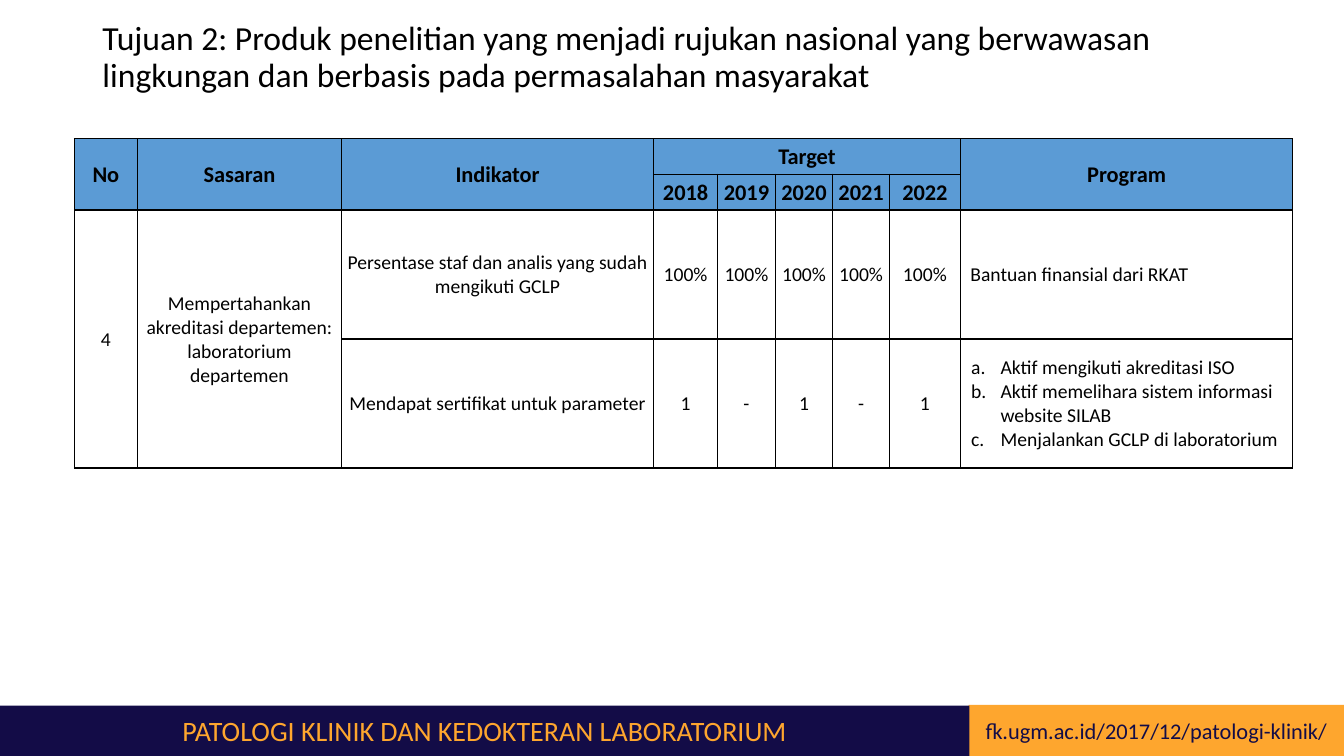
import pptx
import pptx.dml.color
import pptx.enum.shapes
import pptx.enum.text
import pptx.oxml
import pptx.oxml.ns
import pptx.util

Pt = pptx.util.Pt
ALIGN = pptx.enum.text.PP_ALIGN
MIDDLE = pptx.enum.text.MSO_ANCHOR.MIDDLE
COLORS = {
    "black": "000000",
    "white": "FFFFFF",
    "header": "5B9BD5",
    "navy": "130C47",
    "orange": "FEA62E",
}
COLUMN_WIDTHS = [44.9, 146, 222.8, 45.8, 41.2, 41, 40.6, 50.6, 237.5]
ROW_HEIGHTS = [25.5, 25.5, 92.2, 92.2]
YEARS = ["2018", "2019", "2020", "2021", "2022"]
PROGRAMS = [
    "Aktif mengikuti akreditasi ISO",
    "Aktif memelihara sistem informasi website SILAB",
    "Menjalankan GCLP di laboratorium",
]
# Each entry: text at the top left cell of its span
ROWS = [
    ["No", "Sasaran", "Indikator", "Target", "", "", "", "", "Program"],
    ["", "", "", *YEARS, ""],
    ["4", "Mempertahankan akreditasi departemen: laboratorium departemen",
     "Persentase staf dan analis yang sudah mengikuti GCLP",
     *["100%"] * 5, "Bantuan finansial dari RKAT"],
    ["", "", "Mendapat sertifikat untuk parameter",
     "1", "-", "1", "-", "1", "\n".join(PROGRAMS)],
]
# First row, first column, last row, last column
SPANS = [(0, 0, 1, 0), (0, 1, 1, 1), (0, 2, 1, 2), (0, 3, 0, 7),
         (0, 8, 1, 8), (2, 0, 3, 0), (2, 1, 3, 1)]


class SlideBuilder:
    """Holds the shared style and the current slide."""

    font_name = "Calibri"

    def __init__(self, presentation):
        self.slide = presentation.slides.add_slide(presentation.slide_layouts[5])

    def color(self, name):
        return pptx.dml.color.RGBColor.from_string(COLORS[name])

    def fill(self, target, name):
        target.fill.solid()
        target.fill.fore_color.rgb = self.color(name)

    def format(self, paragraph, size, color="black", bold=False, align=ALIGN.LEFT):
        paragraph.alignment = align
        font = paragraph.font
        font.name = self.font_name
        font.size = Pt(size)
        font.bold = bold
        font.color.rgb = self.color(color)

    def title(self, text, left, top, width, height):
        shape = self.slide.shapes.title
        shape.left, shape.top = Pt(left), Pt(top)
        shape.width, shape.height = Pt(width), Pt(height)
        frame = shape.text_frame
        frame.text = text
        frame.auto_size = pptx.enum.text.MSO_AUTO_SIZE.NONE
        frame.vertical_anchor = MIDDLE
        frame.paragraphs[0].line_spacing = 0.9
        self.format(frame.paragraphs[0], 24)

    def bar(self, text, left, top, width, height, fill, color, size):
        shape = self.slide.shapes.add_shape(
            pptx.enum.shapes.MSO_SHAPE.RECTANGLE,
            Pt(left), Pt(top), Pt(width), Pt(height))
        shape.shadow.inherit = False
        shape.line.fill.background()
        self.fill(shape, fill)
        frame = shape.text_frame
        frame.text = text
        frame.word_wrap = True
        frame.vertical_anchor = MIDDLE
        self.format(frame.paragraphs[0], size, color, align=ALIGN.CENTER)

    def indent(self, paragraph, margin, hanging=0):
        properties = paragraph._p.get_or_add_pPr()
        properties.set("marL", str(Pt(margin)))
        properties.set("indent", str(-Pt(hanging)))
        if hanging:
            properties.append(pptx.oxml.parse_xml(
                f'<a:buAutoNum {pptx.oxml.ns.nsdecls("a")} type="alphaLcPeriod"/>'))

    def borders(self, cell):
        properties = cell._tc.get_or_add_tcPr()
        for side in "LRTB":
            properties.append(pptx.oxml.parse_xml(
                f'<a:ln{side} {pptx.oxml.ns.nsdecls("a")} w="{Pt(1)}"><a:solidFill>'
                f'<a:srgbClr val="{COLORS["black"]}"/></a:solidFill></a:ln{side}>'))

    def cell(self, cell, text, header, program):
        self.borders(cell)
        self.fill(cell, "header" if header else "white")
        cell.margin_left = cell.margin_right = cell.margin_top = Pt(0.7)
        cell.margin_bottom = Pt(0)
        cell.vertical_anchor = MIDDLE
        cell.text = text
        paragraphs = cell.text_frame.paragraphs
        for paragraph in paragraphs:
            if program and len(paragraphs) > 1:
                self.indent(paragraph, 28, 21)
            elif program:
                self.indent(paragraph, 6.5)
            self.format(paragraph, 16 if header else 14, bold=header,
                        align=ALIGN.LEFT if program else ALIGN.CENTER)

    def table(self, left, top):
        table = self.slide.shapes.add_table(
            len(ROW_HEIGHTS), len(COLUMN_WIDTHS), Pt(left), Pt(top),
            Pt(sum(COLUMN_WIDTHS)), Pt(sum(ROW_HEIGHTS))).table
        table.first_row = table.horz_banding = False
        for column, width in zip(table.columns, COLUMN_WIDTHS):
            column.width = Pt(width)
        for row, height in zip(table.rows, ROW_HEIGHTS):
            row.height = Pt(height)
        for r, texts in enumerate(ROWS):
            for c, text in enumerate(texts):
                header = r < 2
                program = c == len(texts) - 1 and not header
                self.cell(table.cell(r, c), text, header, program)
        for top_row, first, bottom_row, last in SPANS:
            table.cell(top_row, first).merge(table.cell(bottom_row, last))


def main():
    presentation = pptx.Presentation()
    presentation.slide_width, presentation.slide_height = Pt(960), Pt(540)
    builder = SlideBuilder(presentation)

    # Heading
    builder.title("Tujuan 2: Produk penelitian yang menjadi rujukan nasional yang "
                  "berwawasan lingkungan dan berbasis pada permasalahan masyarakat",
                  66, 16, 828, 51)

    # Targets by year
    builder.table(53.2, 99)

    # Footer bars
    builder.bar("fk.ugm.ac.id/2017/12/patologi-klinik/",
                692, 503.5, 268, 36.5, "orange", "navy", 16)
    builder.bar("PATOLOGI KLINIK DAN KEDOKTERAN LABORATORIUM",
                0, 504, 692.5, 36, "navy", "orange", 20)

    presentation.save("out.pptx")


if __name__ == "__main__":
    main()
